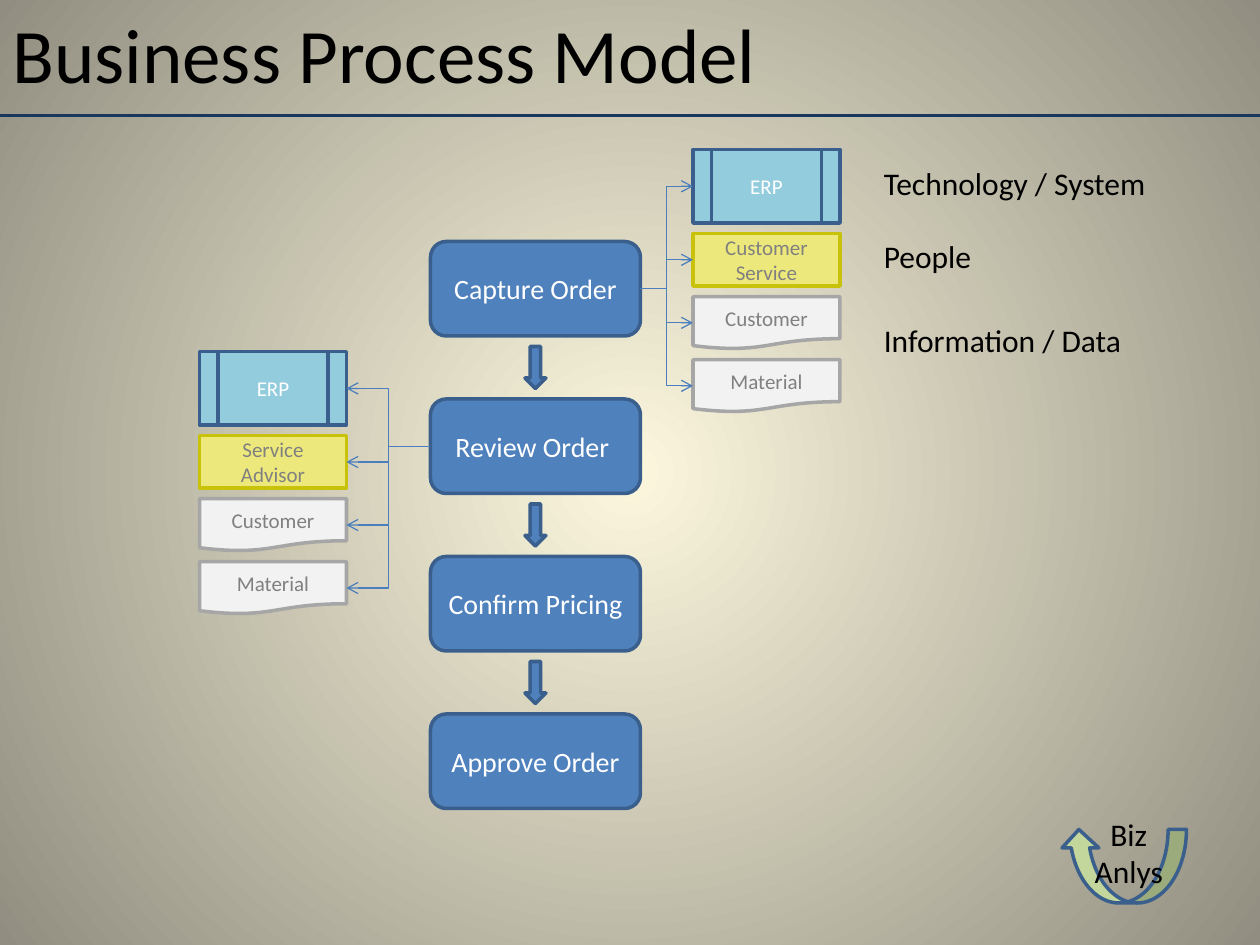
"""Build a business process model slide with steps and their resources."""
from dataclasses import dataclass

from lxml.etree import SubElement
from pptx import Presentation
from pptx.dml.color import RGBColor
from pptx.enum.shapes import MSO_CONNECTOR as Link, MSO_SHAPE as Shape
from pptx.enum.text import MSO_ANCHOR as Anchor, PP_ALIGN as Align
from pptx.oxml.ns import qn
from pptx.util import Inches, Pt

COLS, ROWS = 120, 90
FONT = "Calibri"
BLACK, WHITE, GRAY = "000000", "FFFFFF", "808080"
BLUE, NAVY, LINK_BLUE, RULE_BLUE = "4F81BD", "3A5F8C", "4B7EBC", "17375E"
LEFT_SITE, RIGHT_SITE = 1, 3


@dataclass(frozen=True)
class Box:
    """A rectangle in grid columns and rows."""
    col: float
    row: float
    cols: float
    rows: float


@dataclass(frozen=True)
class Style:
    """The outline, colours and text size of one kind of node."""
    shape: Shape
    fill: str
    line: str
    text: str = WHITE
    size: int = 12


@dataclass(frozen=True)
class Resource:
    """A resource with its row offset and height within a stack."""
    style: Style
    offset: float
    rows: float


@dataclass(frozen=True)
class Stack:
    """Resources of one step, placed on one side of it."""
    step: int
    col: float
    row: float
    names: tuple[str, ...]
    step_site: int
    resource_site: int


STEP = Style(Shape.ROUNDED_RECTANGLE, BLUE, NAVY, size=16)
ARROW = Style(Shape.DOWN_ARROW, BLUE, NAVY)
CYCLE = Style(Shape.CURVED_DOWN_ARROW, "C3D69B", NAVY)
SYSTEM = Style(Shape.FLOWCHART_PREDEFINED_PROCESS, "93CDDD", NAVY)
PEOPLE = Style(Shape.FLOWCHART_PROCESS, "EDE87B", "C8C30A", GRAY)
DATA = Style(Shape.FLOWCHART_DOCUMENT, "F2F2F2", "A6A6A6", GRAY)

STEPS = ("Capture Order", "Review Order ", "Confirm Pricing", "Approve Order")
STEP_BOX, STEP_PITCH = Box(41, 23, 20, 9), 15
RESOURCES = (Resource(SYSTEM, 0, 7), Resource(PEOPLE, 8, 5),
             Resource(DATA, 14, 5), Resource(DATA, 20, 5))
RESOURCE_COLS = 14
STACKS = (
    Stack(0, 66, 14.25, ("ERP", "Customer Service", "Customer", "Material"),
          RIGHT_SITE, LEFT_SITE),
    Stack(1, 19, 33.5, ("ERP", "Service Advisor", "Customer", "Material"),
          LEFT_SITE, RIGHT_SITE),
)
LABELS = (("Technology / System", 15), ("People", 22), ("Information / Data", 30))

prs = Presentation()
prs.slide_width, prs.slide_height = Inches(10), Inches(7.5)


def color(value: str) -> RGBColor:
    """Turn a hex string into a colour."""
    return RGBColor.from_string(value)


def place(box: Box) -> tuple[int, int, int, int]:
    """Turn a grid box into slide lengths."""
    x, y = prs.slide_width / COLS, prs.slide_height / ROWS
    return round(box.col * x), round(box.row * y), round(box.cols * x), round(box.rows * y)


def write(sp, text: str, size: int, hue: str, align: Align, anchor: Anchor) -> None:
    """Set and format the text of a shape."""
    tf = sp.text_frame
    tf.text = text
    tf.word_wrap = True
    tf.vertical_anchor = anchor
    p = tf.paragraphs[0]
    p.alignment = align
    for r in p.runs:
        r.font.name, r.font.size = FONT, Pt(size)
        r.font.color.rgb = color(hue)


def add_text(s, box: Box, text: str, size: int = 18, align: Align = Align.LEFT) -> None:
    """Add a text box."""
    sp = s.shapes.add_textbox(*place(box))
    write(sp, text, size, BLACK, align, Anchor.TOP)


def add_node(s, box: Box, style: Style, text: str = ""):
    """Add a filled shape, with centred text if there is any."""
    sp = s.shapes.add_shape(style.shape, *place(box))
    sp.shadow.inherit = False
    sp.fill.solid()
    sp.fill.fore_color.rgb = color(style.fill)
    sp.line.color.rgb = color(style.line)
    sp.line.width = Pt(2)
    if text:
        write(sp, text, style.size, style.text, Align.CENTER, Anchor.MIDDLE)
    return sp


def add_line(s, kind: Link, ends: tuple[int, int, int, int], hue: str, width: float):
    """Add a connector without a shadow."""
    line = s.shapes.add_connector(kind, *ends)
    line.line.color.rgb = color(hue)
    line.line.width = Pt(width)
    SubElement(line._element.spPr, qn("a:effectLst"))
    return line


def add_link(s, step, resource, stack: Stack) -> None:
    """Join a step to a resource with an elbow arrow."""
    link = add_line(s, Link.ELBOW, (0, 0, 0, 0), LINK_BLUE, 0.75)
    link.begin_connect(step, stack.step_site)
    link.end_connect(resource, stack.resource_site)
    SubElement(link.line._get_or_add_ln(), qn("a:tailEnd"), type="arrow")


def add_stack(s, step, stack: Stack) -> None:
    """Add the resources of a step and their links."""
    for name, item in zip(stack.names, RESOURCES):
        box = Box(stack.col, stack.row + item.offset, RESOURCE_COLS, item.rows)
        add_link(s, step, add_node(s, box, item.style, name), stack)


def add_steps(s) -> list:
    """Add the process steps with arrows between them."""
    steps = []
    for i, name in enumerate(STEPS):
        row = STEP_BOX.row + i * STEP_PITCH
        box = Box(STEP_BOX.col, row, STEP_BOX.cols, STEP_BOX.rows)
        steps.append(add_node(s, box, STEP, name))
        if i < len(STEPS) - 1:
            add_node(s, Box(50, row + 10, 2, 4), ARROW)
    return steps


def set_background(s, center: str, edge: str) -> None:
    """Fill the background with a radial gradient."""
    fill = s.background.fill
    fill.gradient()
    for stop, hue, position in zip(fill.gradient_stops, (center, edge), (0, 1)):
        stop.color.rgb = color(hue)
        stop.position = position
    grad = s._element.find(".//" + qn("a:gradFill"))
    grad.remove(grad.find(qn("a:lin")))
    radial = SubElement(grad, qn("a:path"), {"path": "circle"})
    SubElement(radial, qn("a:fillToRect"), dict.fromkeys("ltrb", "50000"))


def main() -> None:
    """Build and save the slide."""
    s = prs.slides.add_slide(prs.slide_layouts[6])
    set_background(s, "FCF7DD", "918E81")
    add_text(s, Box(0, 0, COLS, 11), "Business Process Model", 44)
    left, top, width, _ = place(Box(0, 11, COLS, 0))
    add_line(s, Link.STRAIGHT, (left, top, left + width, top), RULE_BLUE, 2.25)
    steps = add_steps(s)
    for stack in STACKS:
        add_stack(s, steps[stack.step], stack)
    for text, row in LABELS:
        add_text(s, Box(83, row, 31, 4.8), text)
    add_node(s, Box(101, 79, 12, 7), CYCLE).rotation = 180
    add_text(s, Box(103, 77, 9, 8.5), "Biz Anlys", align=Align.CENTER)
    prs.save("out.pptx")


if __name__ == "__main__":
    main()
